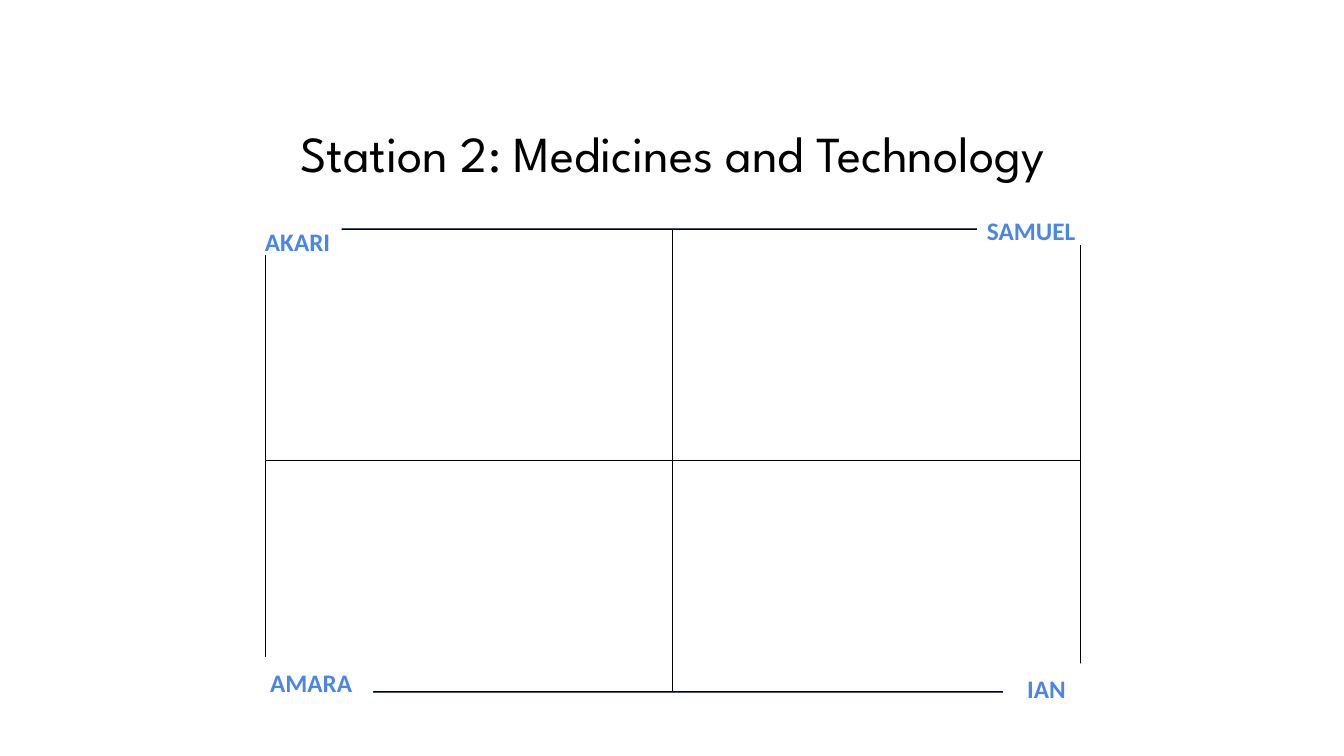
from pptx import Presentation
from pptx.dml.color import RGBColor
from pptx.enum import shapes, text
from pptx.util import Inches, Pt
from lxml import etree

TITLE = "Station 2: Medicines and Technology"
LEFT, TOP, MID_X, MID_Y = 2.63, 2.27, 6.67, 4.57
WIDE, HIGH = 8.06, 4.6
CELL_W, CELL_H = 4.05, 2.29
LEFT_AL, CENTER = text.PP_ALIGN.LEFT, text.PP_ALIGN.CENTER
# name, left, top, width, alignment
NAMES = [
    ("AKARI", 2.53, 2.14, 0.86, LEFT_AL),
    ("SAMUEL", 9.69, 2.04, 1.12, LEFT_AL),
    ("AMARA", 2.58, 6.52, 1.12, LEFT_AL),
    ("IAN", 9.95, 6.58, 0.86, CENTER),
]
NAME_H = 0.39

BLACK = RGBColor(0, 0, 0)
WHITE = RGBColor(255, 255, 255)
GRAY = RGBColor(0xE7, 0xE6, 0xE6)
SLATE = RGBColor(0x44, 0x54, 0x6A)
BLUE = RGBColor(0x4A, 0x86, 0xE8)


def style(font, face, size, color, bold=False):
    font.name, font.size, font.bold = face, Pt(size), bold
    font.color.rgb = color


def stroke(line, color):
    line.color.rgb = color
    line.width = Pt(0.75)


def add_box(slide, x, y, w, h, fill, edge=None):
    box = slide.shapes.add_shape(shapes.MSO_SHAPE.RECTANGLE,
                                 *map(Inches, (x, y, w, h)))
    box.shadow.inherit = False
    box.fill.solid()
    box.fill.fore_color.rgb = fill
    if edge is None:
        box.line.fill.background()
    else:
        stroke(box.line, edge)
    return box


def add_line(slide, *ends):
    line = slide.shapes.add_connector(shapes.MSO_CONNECTOR.STRAIGHT,
                                      *map(Inches, ends))
    stroke(line.line, SLATE)
    props = line.element.spPr
    etree.SubElement(props, "{%s}effectLst" % props.nsmap["a"])
    return line


def add_name(slide, name, x, y, w, align):
    frame = add_box(slide, x, y, w, NAME_H, WHITE).text_frame
    frame.word_wrap = True
    frame.vertical_anchor = text.MSO_ANCHOR.TOP
    frame.margin_left = frame.margin_right = Inches(0.1)
    frame.margin_top = frame.margin_bottom = Inches(0.1)
    frame.text = name
    para = frame.paragraphs[0]
    para.alignment = align
    style(para.font, "Calibri", 18, BLUE, True)


def main():
    deck = Presentation()
    deck.slide_width, deck.slide_height = Inches(13.33), Inches(7.5)
    slide = deck.slides.add_slide(deck.slide_layouts[5])

    # Title
    title = slide.shapes.title
    title.left, title.top = Inches(1.71), Inches(1.2)
    title.width, title.height = Inches(9.92), Inches(0.62)
    frame = title.text_frame
    frame.text = TITLE
    frame.auto_size = text.MSO_AUTO_SIZE.NONE
    frame.vertical_anchor = text.MSO_ANCHOR.MIDDLE
    para = frame.paragraphs[0]
    para.alignment = CENTER
    style(para.font, "League Spartan", 36, BLACK)

    # Board with its cross lines
    board = add_box(slide, LEFT, TOP, WIDE, HIGH, GRAY, SLATE)
    down = add_line(slide, MID_X, TOP, MID_X, TOP + HIGH)
    across = add_line(slide, LEFT, MID_Y, LEFT + WIDE, MID_Y)
    for line, start, end in ((down, 0, 2), (across, 1, 3)):
        line.begin_connect(board, start)
        line.end_connect(board, end)

    # Four answer cells, lower row first
    for y in (MID_Y, MID_Y - CELL_H):
        for x in (LEFT, MID_X):
            add_box(slide, x, y, CELL_W, CELL_H, WHITE, BLACK)

    # Names at the corners
    for entry in NAMES:
        add_name(slide, *entry)

    deck.save("out.pptx")


if __name__ == "__main__":
    main()
